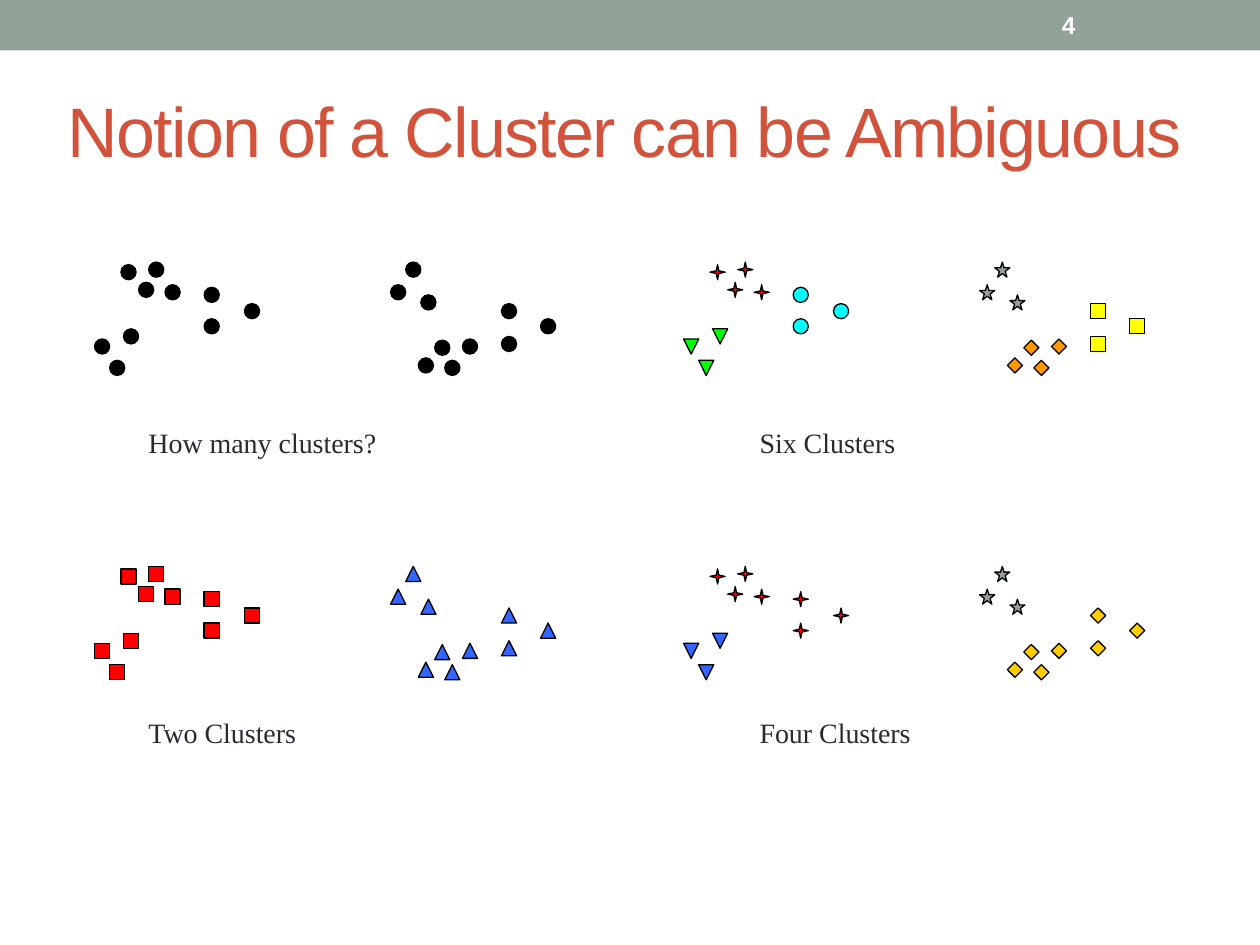
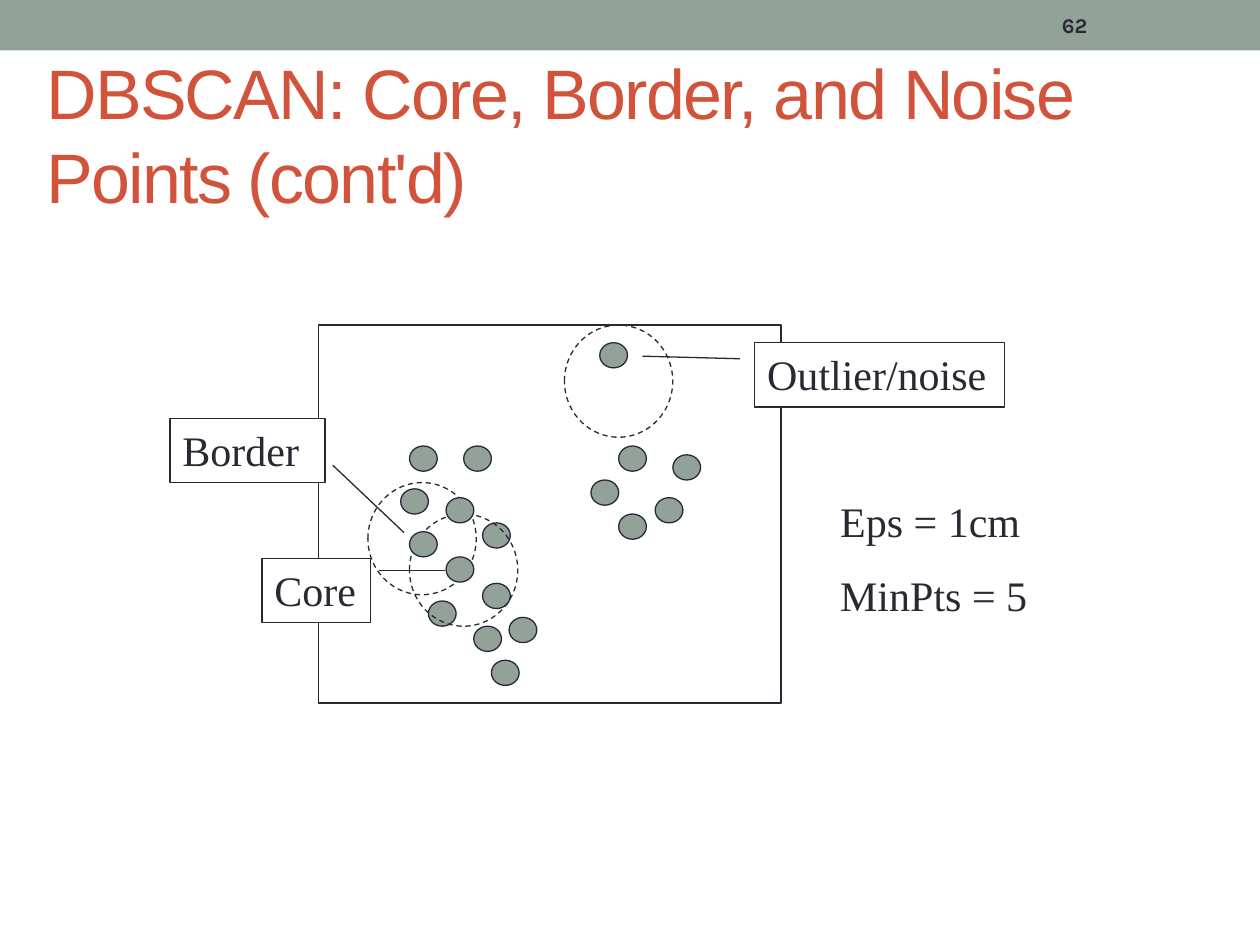
"""Build two slides on clustering: ambiguous clusters and DBSCAN point types."""
import dataclasses
import typing

import pptx
import pptx.dml.color
import pptx.enum.dml
import pptx.enum.shapes
import pptx.enum.text
import pptx.util

COLUMNS, ROWS = 100, 75
SLIDE_WIDTH, SLIDE_HEIGHT = pptx.util.Inches(10), pptx.util.Inches(7.5)
SHAPE = pptx.enum.shapes.MSO_SHAPE
ANCHOR = pptx.enum.text.MSO_ANCHOR
SAGE, INK, RUST, BLACK, WHITE = "93A299", "292934", "D2533C", "000000", "FFFFFF"

TITLE = {"name": "Arial", "size": pptx.util.Pt(40)}
CAPTION = {"name": "Times New Roman", "size": pptx.util.Pt(16)}
LABEL = {"name": "Times New Roman", "size": pptx.util.Pt(24)}
LIGHT_NUMBER = {"name": "Arial", "size": pptx.util.Pt(14), "bold": True}
DARK_NUMBER = {"name": "Karla", "size": pptx.util.Pt(12), "bold": True}


@dataclasses.dataclass(frozen=True)
class Box:
    """A rectangle in grid columns and rows."""
    column: float
    row: float
    width: float
    height: float


@dataclasses.dataclass(frozen=True)
class Marker:
    """The outline and fill that mark the points of one cluster."""
    outline: typing.Any
    fill: str


@dataclasses.dataclass(frozen=True)
class Panel:
    """One clustering of the shared points, with a marker for each blob."""
    caption: str
    across: int
    down: int
    markers: tuple[Marker, ...]


@dataclasses.dataclass(frozen=True)
class Callout:
    """A framed term with a leader line."""
    term: str
    box: Box
    leader: tuple[float, ...]


DOT = Marker(SHAPE.OVAL, BLACK)
RED_SQUARE = Marker(SHAPE.RECTANGLE, "FF0000")
BLUE_TRIANGLE = Marker(SHAPE.ISOSCELES_TRIANGLE, "3366FF")
RED_STAR = Marker(SHAPE.STAR_4_POINT, "FF0000")
SAGE_STAR = Marker(SHAPE.STAR_5_POINT, SAGE)
GOLD_DIAMOND = Marker(SHAPE.DIAMOND, "FFCC00")
BLUE_WEDGE = Marker(SHAPE.FLOWCHART_MERGE, "3366FF")
GREEN_WEDGE = Marker(SHAPE.FLOWCHART_MERGE, "00FF00")
CYAN_DOT = Marker(SHAPE.OVAL, "00FFFF")
ORANGE_DIAMOND = Marker(SHAPE.DIAMOND, "FF9900")
YELLOW_SQUARE = Marker(SHAPE.RECTANGLE, "FFFF00")

BLOBS = (
    ((13.1, 22.6), (9.6, 21), (11.8, 20.8), (11, 22.4)),
    ((9.8, 26.1), (7.5, 26.9), (8.7, 28.6)),
    ((16.2, 22.8), (19.4, 24.1), (16.2, 25.3)),
    ((33.4, 23.4), (31, 22.6), (32.2, 20.8)),
    ((36.7, 26.9), (33.2, 28.4), (35.3, 28.6), (34.5, 27)),
    ((39.8, 26.7), (42.9, 25.3), (39.8, 24.1)),
)
POINT_SIZE = 1.2
PANEL_STEP = (46.75, 24.15)
CAPTION_STEP = (48.5, 23)
PANELS = (
    Panel("How many clusters?", 0, 0, (DOT,) * 6),
    Panel("Six Clusters", 1, 0, (RED_STAR, GREEN_WEDGE, CYAN_DOT,
                                 SAGE_STAR, ORANGE_DIAMOND, YELLOW_SQUARE)),
    Panel("Two Clusters", 0, 1, (RED_SQUARE,) * 3 + (BLUE_TRIANGLE,) * 3),
    Panel("Four Clusters", 1, 1, (RED_STAR, BLUE_WEDGE, RED_STAR,
                                  SAGE_STAR, GOLD_DIAMOND, GOLD_DIAMOND)),
)

SAMPLES = (
    (32.5, 35.4), (31.8, 38.8), (36.8, 35.4), (38.3, 41.5), (34, 47.7),
    (37.6, 49.7), (39, 52.4), (38.3, 46.3), (47.6, 27.2), (49.1, 35.4),
    (46.9, 38.1), (52, 39.5), (53.4, 36.1), (49.1, 40.8), (40.4, 49),
)
FRONT_SAMPLES = ((32.5, 42.2), (35.4, 39.5), (35.4, 44.2))
NEIGHBOURHOODS = ((29.2, 38.3), (32.5, 40.8), (44.8, 25.8))
CALLOUTS = (
    Callout("Core", Box(20.8, 44.3, 8.6, 5.1), (0.19, 1.08, 0.19, 1.69)),
    Callout("Border", Box(13.5, 33.2, 12.3, 5.1), (0.73, 1.05, 1.78, 1.51)),
    Callout("Outlier/noise", Box(59.9, 27.2, 19.8, 5.1), (0.25, -0.06, 0.21, -0.45)),
)


def color(hex_value: str) -> pptx.dml.color.RGBColor:
    """Turn a hex string into a colour."""
    return pptx.dml.color.RGBColor.from_string(hex_value)


def place(box: Box) -> tuple[int, ...]:
    """Convert a grid box to slide lengths."""
    return (
        round(box.column * SLIDE_WIDTH / COLUMNS),
        round(box.row * SLIDE_HEIGHT / ROWS),
        round(box.width * SLIDE_WIDTH / COLUMNS),
        round(box.height * SLIDE_HEIGHT / ROWS),
    )


def write(shape, lines: tuple[str, ...], style: dict, ink: str = INK, anchor=ANCHOR.TOP):
    """Fill a shape with left-aligned paragraphs in one style."""
    frame = shape.text_frame
    frame.word_wrap, frame.vertical_anchor = True, anchor
    frame.text = "\n".join(lines)
    for paragraph in frame.paragraphs:
        paragraph.alignment = pptx.enum.text.PP_ALIGN.LEFT
        font = paragraph.runs[0].font
        font.color.rgb = color(ink)
        for attribute, setting in style.items():
            setattr(font, attribute, setting)
    return frame


def add_text(slide, box: Box, lines: tuple[str, ...], style: dict,
             ink: str = INK, anchor=ANCHOR.TOP):
    """Add a text box and return its text frame."""
    return write(slide.shapes.add_textbox(*place(box)), lines, style, ink, anchor)


def add_outline(slide, outline, box: Box, fill: str | None = None,
                line: str | None = INK, dashed: bool = False):
    """Add a flat preset shape, with a thin line if a line colour is given."""
    shape = slide.shapes.add_shape(outline, *place(box))
    shape.shadow.inherit = False
    if fill:
        shape.fill.solid()
        shape.fill.fore_color.rgb = color(fill)
    else:
        shape.fill.background()
    if line:
        shape.line.color.rgb = color(line)
        shape.line.width = pptx.util.Pt(0.75)
    else:
        shape.line.fill.background()
    if dashed:
        shape.line.dash_style = pptx.enum.dml.MSO_LINE.DASH
    return shape


def add_slide(deck, title: str, title_box: Box, number: str, number_style: dict, number_ink: str):
    """Add a slide with the top band, the title and the slide number."""
    slide = deck.slides.add_slide(deck.slide_layouts[6])
    add_outline(slide, SHAPE.RECTANGLE, Box(0, 0, COLUMNS, 4), SAGE, line=None)
    heading = add_text(slide, title_box, (title,), TITLE, RUST, ANCHOR.MIDDLE).paragraphs[0]
    heading.line_spacing = pptx.util.Pt(48)
    heading.runs[0]._r.get_or_add_rPr().set("spc", "-100")
    add_text(slide, Box(83.3, 0.2, 11.7, 3.6), (number,), number_style, number_ink, ANCHOR.MIDDLE)
    return slide


def add_panel(slide, panel: Panel) -> None:
    """Draw the shared points with the markers of one clustering."""
    for marker, blob in zip(panel.markers, BLOBS):
        for column, row in blob:
            box = Box(column + panel.across * PANEL_STEP[0],
                      row + panel.down * PANEL_STEP[1], POINT_SIZE, POINT_SIZE)
            point = add_outline(slide, marker.outline, box, marker.fill, BLACK)
            if marker.outline == SHAPE.STAR_4_POINT:
                point.adjustments[0] = 0.125
    caption_box = Box(10.8 + panel.across * CAPTION_STEP[0],
                      33.3 + panel.down * CAPTION_STEP[1], 25, 3.7)
    add_text(slide, caption_box, (panel.caption,), CAPTION)


def add_samples(slide, samples: tuple[tuple[float, float], ...]) -> None:
    """Draw data points of the DBSCAN example."""
    for column, row in samples:
        add_outline(slide, SHAPE.OVAL, Box(column, row, 2.2, 2), SAGE)


def add_callout(slide, callout: Callout) -> None:
    """Draw a framed term with its leader line."""
    shape = add_outline(slide, SHAPE.LINE_CALLOUT_1, callout.box, WHITE)
    for index, share in enumerate(callout.leader):
        shape.adjustments[index] = share
    write(shape, (callout.term,), LABEL)


def build_ambiguity(deck) -> None:
    """Show four readings of the same points."""
    slide = add_slide(deck, "Notion of a Cluster can be Ambiguous",
                      Box(4.4, 7.3, 90.6, 6), "4", LIGHT_NUMBER, WHITE)
    for panel in PANELS:
        add_panel(slide, panel)


def build_dbscan(deck) -> None:
    """Show core, border and noise points with their neighbourhoods."""
    slide = add_slide(deck, "DBSCAN: Core, Border, and Noise Points (cont'd)",
                      Box(2.7, 5.2, 93.3, 10.8), "62", DARK_NUMBER, INK)
    add_samples(slide, SAMPLES)
    add_outline(slide, SHAPE.RECTANGLE, Box(25.3, 25.8, 36.7, 30))
    for column, row in NEIGHBOURHOODS:
        add_outline(slide, SHAPE.OVAL, Box(column, row, 8.6, 8.9), dashed=True)
    for callout in CALLOUTS:
        add_callout(slide, callout)
    settings = add_text(slide, Box(65.7, 38.8, 18, 11), ("Eps = 1cm", "MinPts = 5"), LABEL)
    settings.paragraphs[1].space_before = pptx.util.Pt(14)
    add_samples(slide, FRONT_SAMPLES)


def main() -> None:
    """Build and save the presentation."""
    deck = pptx.Presentation()
    deck.slide_width, deck.slide_height = SLIDE_WIDTH, SLIDE_HEIGHT
    build_ambiguity(deck)
    build_dbscan(deck)
    deck.save("out.pptx")


if __name__ == "__main__":
    main()
